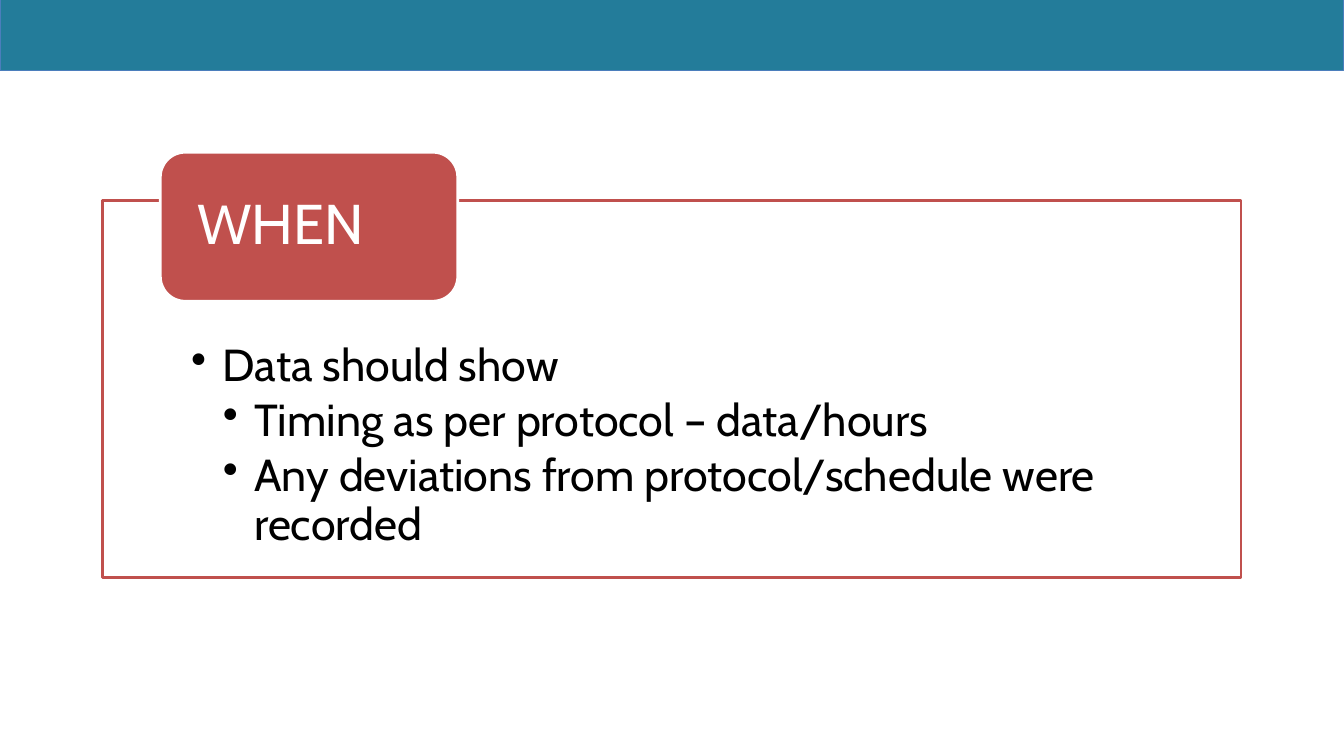
from lxml.etree import SubElement
from pptx import Presentation
from pptx.dml.color import RGBColor
from pptx.enum.shapes import MSO_SHAPE as Shape
from pptx.enum.text import MSO_ANCHOR as Anchor, PP_ALIGN as Align
from pptx.oxml.ns import qn
from pptx.util import Pt

TEAL = RGBColor(0x23, 0x7C, 0x9A)
BLUE = RGBColor(0x4B, 0x7E, 0xBC)
RED = RGBColor(0xC0, 0x50, 0x4D)
WHITE = RGBColor(0xFF, 0xFF, 0xFF)
BLACK = RGBColor(0, 0, 0)

FONT = "Cabin"
PAGE_WIDTH, PAGE_HEIGHT = 960, 540
INDENT = 22.5
POINTS = [
    (1, "Data should show"),
    (2, "Timing as per protocol – data/hours"),
    (2, "Any deviations from protocol/schedule were recorded"),
]


def add_box(page, kind, area, fill, line, weight):
    box = page.shapes.add_shape(kind, *(Pt(length) for length in area))
    box.shadow.inherit = False
    box.fill.solid()
    box.fill.fore_color.rgb = fill
    box.line.color.rgb = line
    box.line.width = Pt(weight)
    return box


def set_frame(box, anchor, left, top, right, bottom):
    frame = box.text_frame
    frame.word_wrap = True
    frame.vertical_anchor = anchor
    frame.margin_left, frame.margin_top = Pt(left), Pt(top)
    frame.margin_right, frame.margin_bottom = Pt(right), Pt(bottom)
    return frame


def style_paragraph(para, text, size, color, space_after):
    para.text = text
    para.alignment = Align.LEFT
    para.line_spacing = 0.9
    para.space_before = Pt(0)
    para.space_after = Pt(space_after)
    para.font.name = FONT
    para.font.size = Pt(size)
    para.font.color.rgb = color


def add_bullet(para, level):
    para.level = level
    properties = para._p.get_or_add_pPr()
    properties.set("marL", str(Pt(INDENT * level)))
    properties.set("indent", str(-Pt(INDENT)))
    SubElement(properties, qn("a:buChar"), char="•")


def add_banner(page, area):
    add_box(page, Shape.RECTANGLE, area, TEAL, BLUE, 0.75)


def add_topic(page, label, points, area):
    left, top, width, height = area

    # Outlined panel with the bullet list
    panel = add_box(page, Shape.RECTANGLE, area, WHITE, RED, 2)
    frame = set_frame(panel, Anchor.TOP, 63.1, 101.6, 63.1, 18)
    for number, (level, text) in enumerate(points):
        para = frame.add_paragraph() if number else frame.paragraphs[0]
        add_bullet(para, level)
        style_paragraph(para, text, 32, BLACK, 4.8)

    # Label tab over the top edge
    tab_area = (left + 41, top - 34.6, 212.5, 106.5)
    tab = add_box(page, Shape.ROUNDED_RECTANGLE, tab_area, RED, WHITE, 2)
    frame = set_frame(tab, Anchor.MIDDLE, 21.5, 0, 21.5, 0)
    style_paragraph(frame.paragraphs[0], label, 40, WHITE, 14)


def main():
    deck = Presentation()
    deck.slide_width, deck.slide_height = Pt(PAGE_WIDTH), Pt(PAGE_HEIGHT)
    page = deck.slides.add_slide(deck.slide_layouts[6])
    add_banner(page, (0, 0, PAGE_WIDTH, 50.4))
    add_topic(page, "WHEN", POINTS, (73.5, 143.3, 813, 269.3))
    deck.save("out.pptx")


if __name__ == "__main__":
    main()
